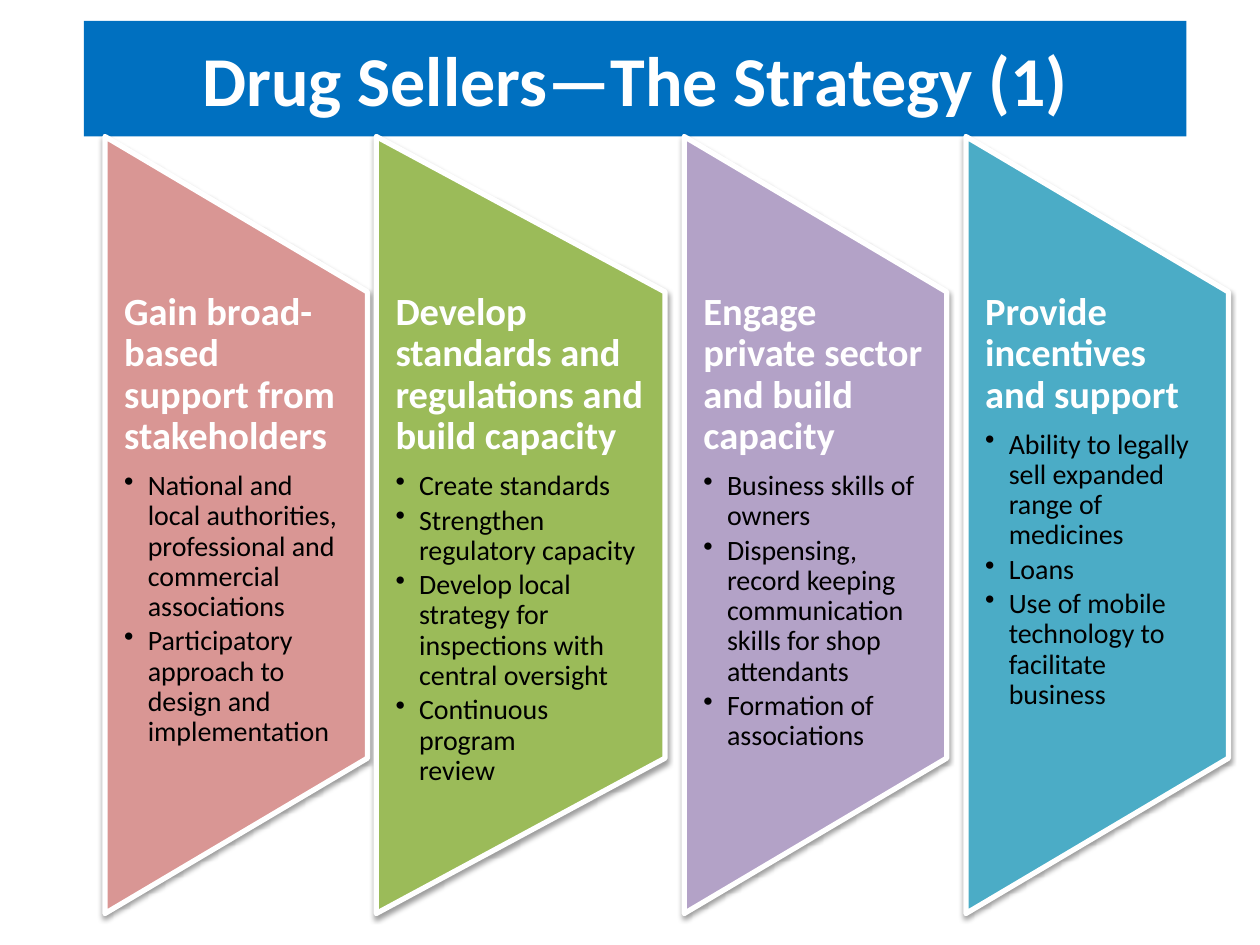
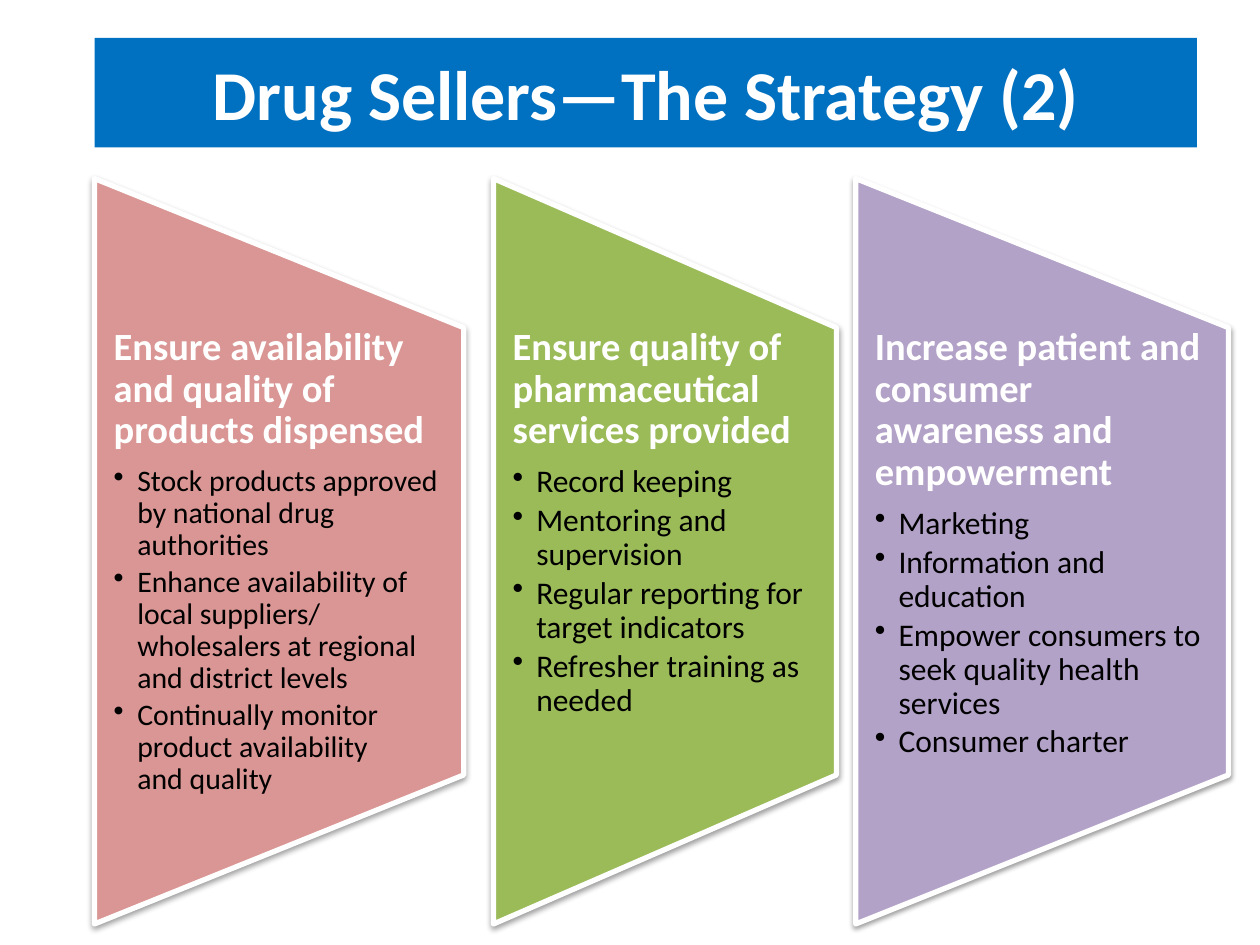
from lxml import etree
from pptx import Presentation
from pptx.dml.color import RGBColor
from pptx.enum.shapes import MSO_SHAPE as SHAPE
from pptx.enum.text import MSO_ANCHOR as ANCHOR, MSO_AUTO_SIZE as FIT, PP_ALIGN as ALIGN
from pptx.oxml import parse_xml
from pptx.oxml.ns import nsdecls, qn
from pptx.util import Pt

FONT = "Calibri"
COLORS = {
    "band": "0070C0", "white": "FFFFFF", "black": "000000",
    "rose": "D99694", "green": "9BBB59", "lilac": "B3A2C7", "teal": "4BACC6",
}
HEADING_SIZE = 22
INDENT = 13.5
SHADOW = (
    f'<a:effectLst {nsdecls("a")}>'
    '<a:outerShdw blurRad="39370" dist="20320" dir="5400000" rotWithShape="0">'
    f'<a:srgbClr val="{COLORS["black"]}"><a:alpha val="38000"/></a:srgbClr>'
    '</a:outerShdw></a:effectLst>'
)

# Title box, panel top and height, then panels: left, width, colour, bullet size, heading, bullets
SLIDES = [
    ("Drug Sellers—The Strategy (1)", (48, 12, 630, 66), 78, 444, [
        (60, 150, "rose", 16, "Gain broad-based support from stakeholders", [
            "National and local authorities, professional and commercial associations",
            "Participatory approach to design and implementation"]),
        (215, 165, "green", 16, "Develop standards and regulations and build capacity", [
            "Create standards",
            "Strengthen regulatory capacity",
            "Develop local strategy for inspections with central oversight",
            "Continuous\nprogram\nreview"]),
        (391, 150, "lilac", 16, "Engage private sector and build capacity", [
            "Business skills of owners",
            "Dispensing, record keeping communication skills for shop attendants",
            "Formation of associations"]),
        (552, 150, "teal", 16, "Provide incentives and support", [
            "Ability to legally sell expanded range of medicines",
            "Loans",
            "Use of mobile technology to facilitate business"]),
    ]),
    ("Drug Sellers—The Strategy (2)", (54, 21.6, 630, 62.6), 102, 426, [
        (54, 211, "rose", 17, "Ensure availability and quality of products dispensed", [
            "Stock products approved by national drug authorities",
            "Enhance availability of local suppliers/ wholesalers at regional and district levels",
            "Continually monitor product availability\nand quality"]),
        (282, 196, "green", 18, "Ensure quality of pharmaceutical services provided", [
            "Record keeping",
            "Mentoring and supervision",
            "Regular reporting for target indicators",
            "Refresher training as needed"]),
        (489, 213, "lilac", 18, "Increase patient and consumer awareness and empowerment", [
            "Marketing",
            "Information and education",
            "Empower consumers to seek quality health services",
            "Consumer charter"]),
    ]),
]


def rgb(name):
    return RGBColor.from_string(COLORS[name])


def add_text(p, text, size, color, bold=False):
    """Add runs to a paragraph, with a line break at each newline."""
    for i, line in enumerate(text.split("\n")):
        if i:
            p.add_line_break()
        r = p.add_run()
        r.text = line
        r.font.name, r.font.size, r.font.bold = FONT, Pt(size), bold
        r.font.color.rgb = rgb(color)


def set_bullet(p):
    pPr = p._p.get_or_add_pPr()
    pPr.set("marL", str(Pt(INDENT)))
    pPr.set("indent", str(-Pt(INDENT)))
    etree.SubElement(pPr, qn("a:buChar")).set("char", "•")


def add_title(slide, text, box):
    sp = slide.shapes.title
    sp.left, sp.top, sp.width, sp.height = map(Pt, box)
    sp.fill.solid()
    sp.fill.fore_color.rgb = rgb("band")
    tf = sp.text_frame
    tf.auto_size, tf.vertical_anchor = FIT.NONE, ANCHOR.MIDDLE
    p = tf.paragraphs[0]
    p.alignment = ALIGN.CENTER
    add_text(p, text, 40, "white", True)


def add_panel_outline(shapes, left, top, width, height, color):
    """Turn a trapezoid a quarter left, so that its long side is the left edge."""
    shift = (height - width) / 2
    sp = shapes.add_shape(SHAPE.FLOWCHART_MANUAL_OPERATION, Pt(left - shift),
                          Pt(top + shift), Pt(height), Pt(width))
    sp.rotation = 270
    sp.fill.solid()
    sp.fill.fore_color.rgb = rgb(color)
    sp.line.color.rgb = rgb("white")
    sp.line.width = Pt(3)
    sp._element.spPr.append(parse_xml(SHADOW))


def add_panel_text(shapes, left, top, width, height, size, heading, bullets):
    tf = shapes.add_textbox(Pt(left), Pt(top), Pt(width), Pt(height)).text_frame
    tf.word_wrap = True
    tf.margin_left = tf.margin_right = Pt(11)
    tf.margin_top = tf.margin_bottom = 0
    p = tf.paragraphs[0]
    p.line_spacing, p.space_after = 0.9, Pt(HEADING_SIZE * 0.35)
    add_text(p, heading, HEADING_SIZE, "white", True)
    for bullet in bullets:
        p = tf.add_paragraph()
        p.level = 1
        p.line_spacing, p.space_after = 0.9, Pt(size * 0.15)
        set_bullet(p)
        add_text(p, bullet, size, "black")


def add_panels(slide, top, height, panels):
    shapes = slide.shapes.add_group_shape().shapes
    for left, width, color, size, heading, bullets in panels:
        add_panel_outline(shapes, left, top, width, height, color)
        add_panel_text(shapes, left, top + height / 5, width, height * 3 / 5,
                       size, heading, bullets)


def main():
    prs = Presentation()
    prs.slide_width, prs.slide_height = Pt(720), Pt(540)
    for title, title_box, top, height, panels in SLIDES:
        slide = prs.slides.add_slide(prs.slide_layouts[5])
        add_title(slide, title, title_box)
        add_panels(slide, top, height, panels)
    prs.save("out.pptx")


if __name__ == "__main__":
    main()
